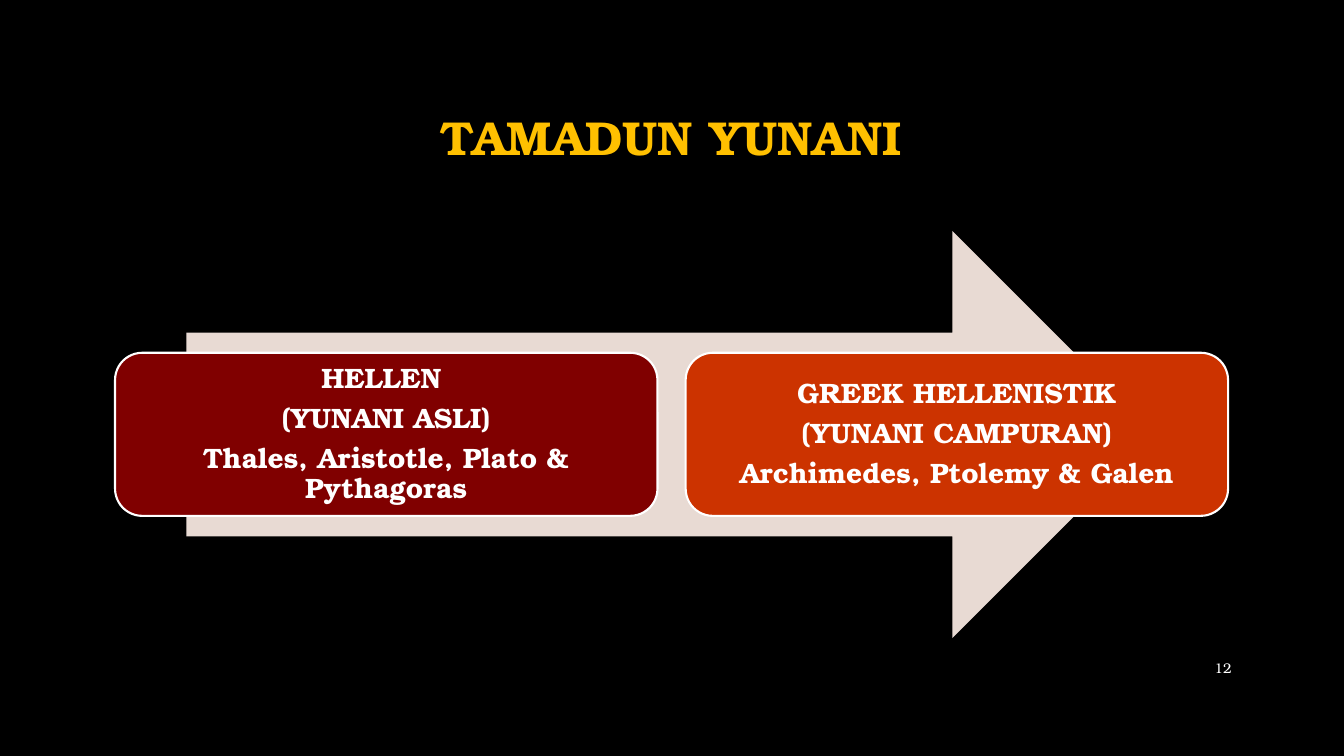
from dataclasses import dataclass

from pptx import Presentation
from pptx.dml.color import RGBColor
from pptx.enum.shapes import MSO_SHAPE
from pptx.enum.text import MSO_ANCHOR, PP_ALIGN
from pptx.shapes.autoshape import Shape
from pptx.slide import Slide
from pptx.util import Cm, Pt

ARROW = MSO_SHAPE.RIGHT_ARROW
ROUNDED = MSO_SHAPE.ROUNDED_RECTANGLE
MIDDLE = MSO_ANCHOR.MIDDLE
CENTER = PP_ALIGN.CENTER
RIGHT = PP_ALIGN.RIGHT

BLACK = RGBColor(0x00, 0x00, 0x00)
WHITE = RGBColor(0xFF, 0xFF, 0xFF)
GOLD = RGBColor(0xFF, 0xC0, 0x00)
BEIGE = RGBColor(0xE8, 0xDA, 0xD3)
MAROON = RGBColor(0x80, 0x00, 0x00)
ORANGE = RGBColor(0xCC, 0x33, 0x00)

FONT = "TeX Gyre Bonum"
CARD_LEFT, CARD_TOP = 2.9, 8.89
CARD_WIDTH, CARD_HEIGHT, CARD_GAP = 13.67, 4.11, 0.71


@dataclass(frozen=True)
class Box:
    """Place and size in centimetres."""
    left: float
    top: float
    width: float
    height: float

    def lengths(self) -> tuple[Cm, Cm, Cm, Cm]:
        return Cm(self.left), Cm(self.top), Cm(self.width), Cm(self.height)


@dataclass(frozen=True)
class Era:
    fill: RGBColor
    lines: tuple[str, ...]


ERAS = (
    Era(MAROON, ("HELLEN ", "(YUNANI ASLI)",
                 "Thales, Aristotle, Plato & Pythagoras")),
    Era(ORANGE, ("GREEK HELLENISTIK", "(YUNANI CAMPURAN)",
                 "Archimedes, Ptolemy & Galen")),
)


def write_text(shape: Shape, *lines: str, size: float,
               color: RGBColor = WHITE, bold: bool = True,
               align: PP_ALIGN = CENTER, line_spacing: float = 0.9,
               space_after: float = 0) -> None:
    frame = shape.text_frame
    frame.word_wrap = True
    frame.vertical_anchor = MIDDLE
    for index, line in enumerate(lines):
        paragraph = frame.add_paragraph() if index else frame.paragraphs[0]
        paragraph.alignment = align
        paragraph.line_spacing = line_spacing
        paragraph.space_after = Pt(space_after)
        run = paragraph.add_run()
        run.text = line
        run.font.name = FONT
        run.font.size = Pt(size)
        run.font.bold = bold
        run.font.color.rgb = color


def add_filled_shape(slide: Slide, kind: MSO_SHAPE, box: Box,
                     fill: RGBColor) -> Shape:
    shape = slide.shapes.add_shape(kind, *box.lengths())
    shape.shadow.inherit = False
    shape.fill.solid()
    shape.fill.fore_color.rgb = fill
    shape.line.fill.background()
    return shape


def add_era(slide: Slide, era: Era, index: int) -> None:
    left = CARD_LEFT + index * (CARD_WIDTH + CARD_GAP)
    box = Box(left, CARD_TOP, CARD_WIDTH, CARD_HEIGHT)
    card = add_filled_shape(slide, ROUNDED, box, era.fill)
    card.line.color.rgb = WHITE
    card.line.width = Pt(1.5)
    frame = card.text_frame
    frame.margin_left = frame.margin_right = Cm(0.21)
    frame.margin_top = frame.margin_bottom = Cm(0.21)
    write_text(card, *era.lines, size=20, space_after=7)


def main() -> None:
    presentation = Presentation()
    presentation.slide_width = Cm(33.87)
    presentation.slide_height = Cm(19.05)
    slide = presentation.slides.add_slide(presentation.slide_layouts[6])
    slide.background.fill.solid()
    slide.background.fill.fore_color.rgb = BLACK

    # Title
    title = slide.shapes.add_textbox(*Box(2.54, 1.7, 28.75, 3.68).lengths())
    write_text(title, "TAMADUN YUNANI", size=34, color=GOLD)

    # Timeline arrow with the two eras
    add_filled_shape(slide, ARROW, Box(4.7, 5.82, 24.43, 10.26), BEIGE)
    for index, era in enumerate(ERAS):
        add_era(slide, era, index)

    # Slide number
    number = slide.shapes.add_textbox(*Box(29.21, 16.33, 2.08, 1.02).lengths())
    write_text(number, "12", size=10, bold=False, align=RIGHT, line_spacing=1.0)

    presentation.save("out.pptx")


if __name__ == "__main__":
    main()
